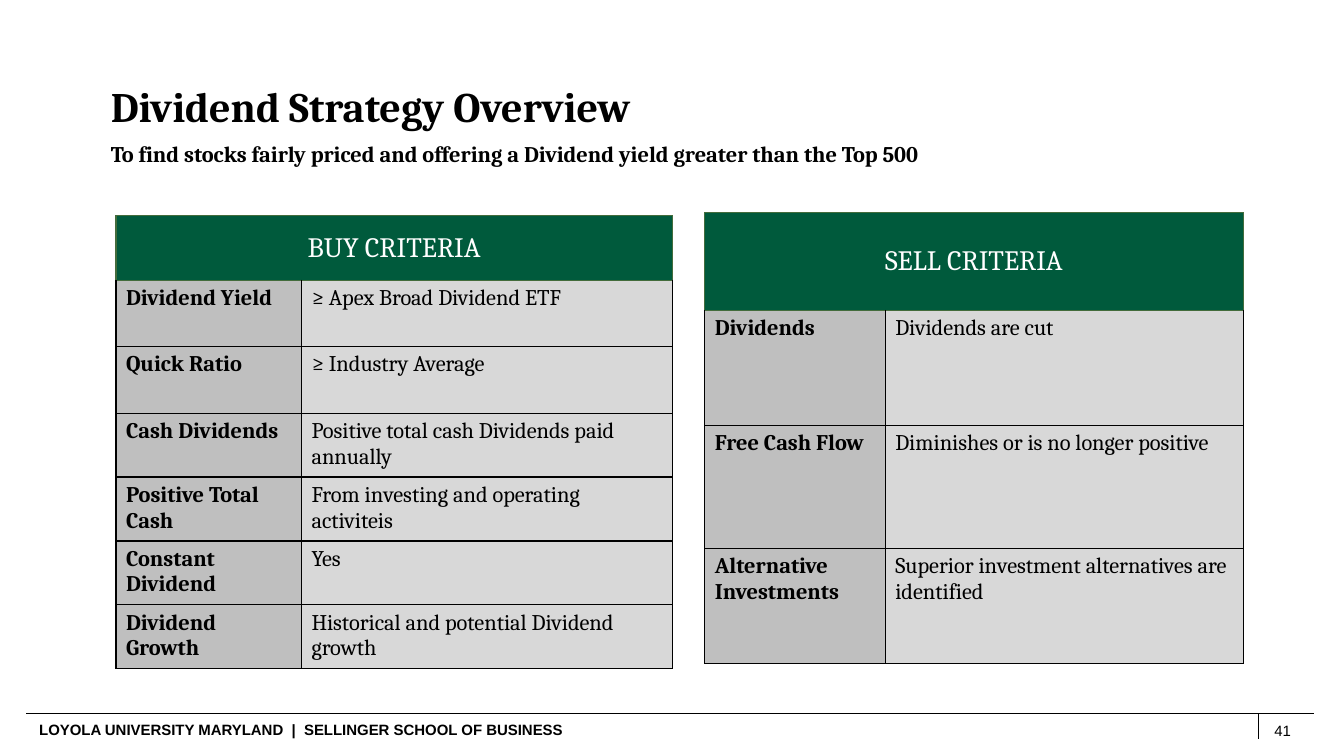
from dataclasses import dataclass

from lxml.etree import SubElement
from pptx import Presentation
from pptx.dml.color import RGBColor as RGB
from pptx.enum.shapes import MSO_CONNECTOR as CONN
from pptx.enum.text import MSO_ANCHOR as ANCHOR, PP_ALIGN as ALIGN
from pptx.oxml.ns import qn
from pptx.util import Pt

PX = 9144  # EMU per px, 100 px to the inch


@dataclass(frozen=True)
class Theme:
    ink: str = "000000"
    white: str = "FFFFFF"
    green: str = "005A3C"
    header_edge: str = "436C3C"
    label_fill: str = "BFBFBF"
    value_fill: str = "D8D8D8"
    serif: str = "Cambria"
    sans: str = "Arial"
    title: float = 30
    header: float = 20
    body: float = 16
    footer: float = 10.7


T = Theme()

BUY = ("BUY CRITERIA", [
    ("Dividend Yield", "≥ Apex Broad Dividend ETF"),
    ("Quick Ratio", "≥ Industry Average"),
    ("Cash Dividends", "Positive total cash Dividends paid annually"),
    ("Positive Total Cash", "From investing and operating activiteis"),
    ("Constant Dividend", "Yes"),
    ("Dividend Growth", "Historical and potential Dividend growth"),
])
SELL = ("SELL CRITERIA", [
    ("Dividends", "Dividends are cut"),
    ("Free Cash Flow", "Diminishes or is no longer positive"),
    ("Alternative Investments", "Superior investment alternatives are identified"),
])


def px(*lengths):
    return [n * PX for n in lengths]


def write(tf, text, size, name=T.serif, bold=False, color=T.ink):
    p = tf.paragraphs[0]
    r = p.add_run()
    r.text = text
    for key, value in dict(size=Pt(size), name=name, bold=bold).items():
        setattr(r.font, key, value)
    r.font.color.rgb = RGB.from_string(color)
    return p


def add_text(slide, box, text, size, **fmt):
    tf = slide.shapes.add_textbox(*px(*box)).text_frame
    tf.word_wrap = True
    write(tf, text, size, **fmt)


def add_rule(slide, x1, y1, x2, y2):
    line = slide.shapes.add_connector(CONN.STRAIGHT, *px(x1, y1, x2, y2))
    line.line.color.rgb = RGB.from_string(T.ink)
    line.line.width = Pt(0.75)
    SubElement(line._element.spPr, qn("a:effectLst"))


def style_cell(cell, fill, edges):
    """Edge colours come in the order left, right, top, bottom."""
    tcPr = cell._tc.get_or_add_tcPr()
    for side, color in zip("LRTB", edges):
        ln = SubElement(tcPr, qn(f"a:ln{side}"), w=str(Pt(1)))
        SubElement(SubElement(ln, qn("a:solidFill")), qn("a:srgbClr"), val=color)
    cell.fill.solid()
    cell.fill.fore_color.rgb = RGB.from_string(fill)


def add_heading(slide, x, y, w):
    add_text(slide, (x, y, w, 81), "Dividend Strategy Overview", T.title, bold=True)
    add_text(slide, (x, y + 59, w - 200, 45),
             "To find stocks fairly priced and offering a Dividend yield "
             "greater than the Top 500", T.body, bold=True)


def add_criteria(slide, x, y, cols, rows, content):
    title, criteria = content
    table = slide.shapes.add_table(len(rows), len(cols),
                                   *px(x, y, sum(cols), sum(rows))).table
    for col, width in zip(table.columns, cols):
        col.width = width * PX
    for row, height in zip(table.rows, rows):
        row.height = height * PX

    # Header across both columns
    for cell in table.rows[0].cells:
        style_cell(cell, T.green, [T.header_edge] * 4)
    head = table.cell(0, 0)
    head.merge(table.cell(0, 1))
    head.vertical_anchor = ANCHOR.MIDDLE
    for side, inset in dict(left=13, right=13, top=7, bottom=7).items():
        setattr(head, f"margin_{side}", inset * PX)
    write(head.text_frame, title, T.header, color=T.white).alignment = ALIGN.CENTER

    # Criterion and its rule
    for i, pair in enumerate(criteria, 1):
        top = T.header_edge if i == 1 else T.ink
        for j, text in enumerate(pair):
            cell = table.cell(i, j)
            style_cell(cell, (T.label_fill, T.value_fill)[j],
                       (T.ink, T.ink, top, T.ink))
            write(cell.text_frame, text, T.body, bold=j == 0)


def add_footer(slide, x, y, w):
    divider = x + w - 55
    add_rule(slide, x, y, x + w, y)
    add_rule(slide, divider, y, divider, y + 25)
    add_text(slide, (x + 3, y + 2, 571, 28),
             "LOYOLA UNIVERSITY MARYLAND  |  SELLINGER SCHOOL OF BUSINESS",
             T.footer, name=T.sans, bold=True)
    add_text(slide, (divider + 6, y + 3, 56, 25), "41", T.footer, name=T.sans)


def main():
    prs = Presentation()
    prs.slide_width, prs.slide_height = px(1333, 750)
    slide = prs.slides.add_slide(prs.slide_layouts[6])
    add_footer(slide, 26, 708, 1277)
    add_heading(slide, 100, 75, 1089)
    add_criteria(slide, 115, 214, (184, 368), (64, 66, 66, 62, 63, 63, 63), BUY)
    add_criteria(slide, 699, 211, (179, 355), (97, 114, 122, 114), SELL)
    prs.save("out.pptx")


if __name__ == "__main__":
    main()
